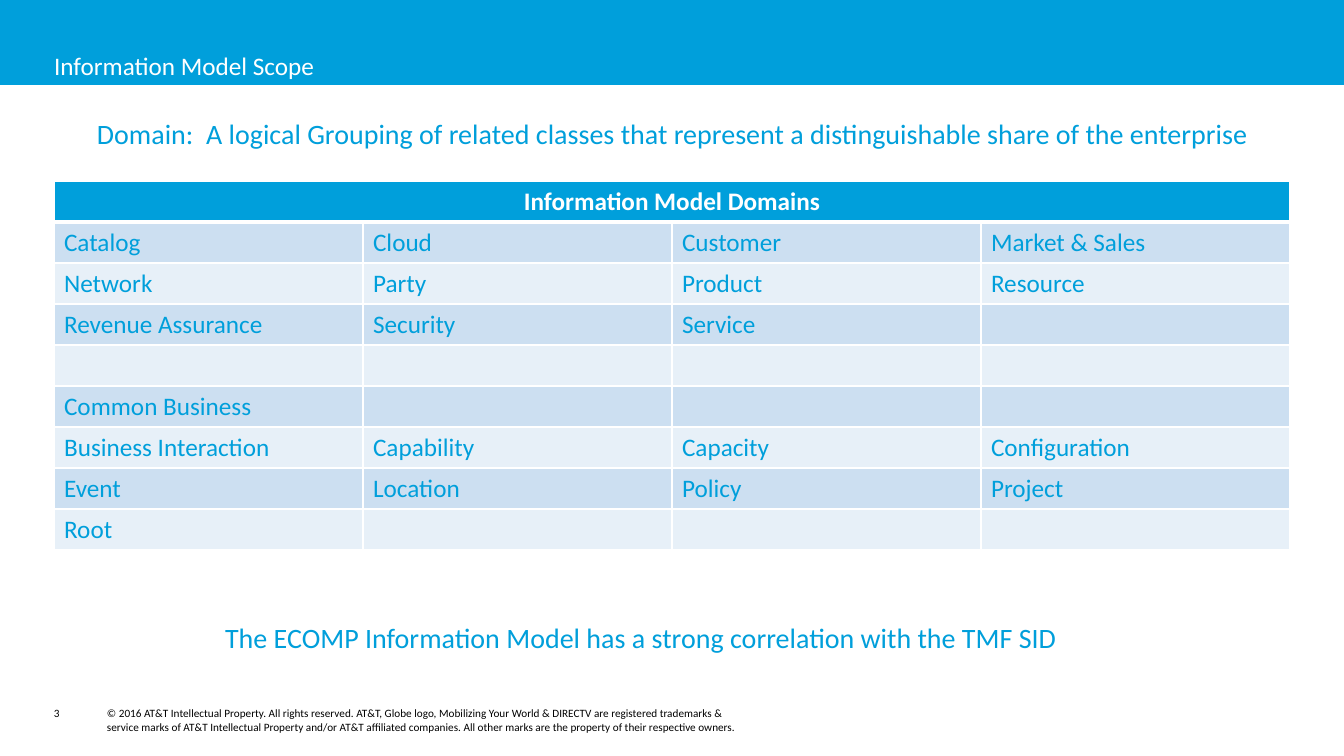
from lxml import etree
from pptx import Presentation
from pptx import util as u
from pptx.dml.color import RGBColor
from pptx.enum import shapes, text
from pptx.oxml.ns import qn

EMU_PER_PX = 914400 / 100.8
FONT = "Calibri"
BLUE, WHITE, BLACK = "009FDB", "FFFFFF", "000000"
BANDS = ["CCDFF1", "E7F0F8"]

DOMAINS = [
    ["Catalog", "Cloud", "Customer", "Market & Sales"],
    ["Network", "Party", "Product", "Resource"],
    ["Revenue Assurance", "Security", "Service", ""],
    ["", "", "", ""],
    ["Common Business", "", "", ""],
    ["Business Interaction", "Capability", "Capacity", "Configuration"],
    ["Event", "Location", "Policy", "Project"],
    ["Root", "", "", ""],
]
COPYRIGHT = (
    "© 2016 AT&T Intellectual Property. All rights reserved. AT&T, Globe logo, "
    "Mobilizing Your World & DIRECTV are registered trademarks & service marks of "
    "AT&T Intellectual Property and/or AT&T affiliated companies. All other marks "
    "are the property of their respective owners."
)


def px(length):
    return u.Emu(round(length * EMU_PER_PX))


def rgb(color):
    return RGBColor.from_string(color)


def add_run(paragraph, wording, size, color, bold=False):
    run = paragraph.add_run()
    run.text = wording
    run.font.name = FONT
    run.font.size = u.Pt(size)
    run.font.bold = bold
    run.font.color.rgb = rgb(color)


def add_label(slide, box, wording, size, color, spacing=None):
    frame = slide.shapes.add_textbox(*map(px, box)).text_frame
    frame.margin_left = frame.margin_right = frame.margin_top = frame.margin_bottom = 0
    frame.word_wrap = True
    frame.vertical_anchor = text.MSO_ANCHOR.TOP
    paragraph = frame.paragraphs[0]
    paragraph.line_spacing = spacing
    add_run(paragraph, wording, size, color)
    return paragraph


def set_borders(cell, top, bottom):
    """Draw white cell borders; the widths are in points."""
    properties = cell._tc.get_or_add_tcPr()
    sides = [("a:lnL", 1), ("a:lnR", 1), ("a:lnT", top), ("a:lnB", bottom)]
    for position, (side, width) in enumerate(sides):
        line = etree.Element(qn(side), w=str(u.Pt(width)))
        fill = etree.SubElement(line, qn("a:solidFill"))
        etree.SubElement(fill, qn("a:srgbClr"), val=WHITE)
        properties.insert(position, line)


def add_header(slide, left, top, width, height):
    band = slide.shapes.add_shape(
        shapes.MSO_SHAPE.RECTANGLE, *map(px, (left, top, width, height)))
    band.shadow.inherit = False
    band.fill.solid()
    band.fill.fore_color.rgb = rgb(BLUE)
    band.line.fill.background()
    title = add_label(slide, (left + 54, top + 47, width - 108, 37),
                      "Information Model Scope", 18, WHITE, 1.1)
    title.space_after = u.Pt(10)


def add_domain_table(slide, left, top, column_width, row_height):
    row_count, column_count = len(DOMAINS) + 1, len(DOMAINS[0])
    box = (left, top, column_width * column_count, row_height * row_count)
    table = slide.shapes.add_table(row_count, column_count, *map(px, box)).table
    table.horz_banding = False
    table.first_row = False
    for column in table.columns:
        column.width = px(column_width)
    for row in table.rows:
        row.height = px(row_height)

    # Heading across all columns
    heading = table.cell(0, 0)
    heading.merge(table.cell(0, column_count - 1))
    heading_line = heading.text_frame.paragraphs[0]
    heading_line.alignment = text.PP_ALIGN.CENTER
    add_run(heading_line, "Information Model Domains", 18, WHITE, bold=True)

    # Banded domain names under a thick rule
    for r in range(row_count):
        for c in range(column_count):
            cell = table.cell(r, c)
            cell.fill.solid()
            cell.fill.fore_color.rgb = rgb(BANDS[(r - 1) % 2] if r else BLUE)
            set_borders(cell, 3 if r == 1 else 1, 3 if r == 0 else 1)
            if r and DOMAINS[r - 1][c]:
                add_run(cell.text_frame.paragraphs[0], DOMAINS[r - 1][c], 18, BLUE)


def add_footer(slide, left, top):
    add_label(slide, (left, top, 32, 25), "3", 8, BLACK, u.Pt(10))
    add_label(slide, (left + 53, top, 651, 30), COPYRIGHT, 8, BLACK, u.Pt(10))


def main():
    deck = Presentation()
    deck.slide_width, deck.slide_height = px(1344), px(756)
    slide = deck.slides.add_slide(deck.slide_layouts[6])
    add_header(slide, 0, 0, 1344, 85)
    add_label(slide, (97, 116, 1180, 36),
              "Domain:  A logical Grouping of related classes that represent "
              "a distinguishable share of the enterprise", 20, BLUE)
    add_domain_table(slide, 54, 181, 309, 41)
    add_label(slide, (225, 620, 844, 36),
              "The ECOMP Information Model has a strong correlation with the TMF SID",
              20, BLUE)
    add_footer(slide, 54, 706)
    deck.save("out.pptx")


if __name__ == "__main__":
    main()
